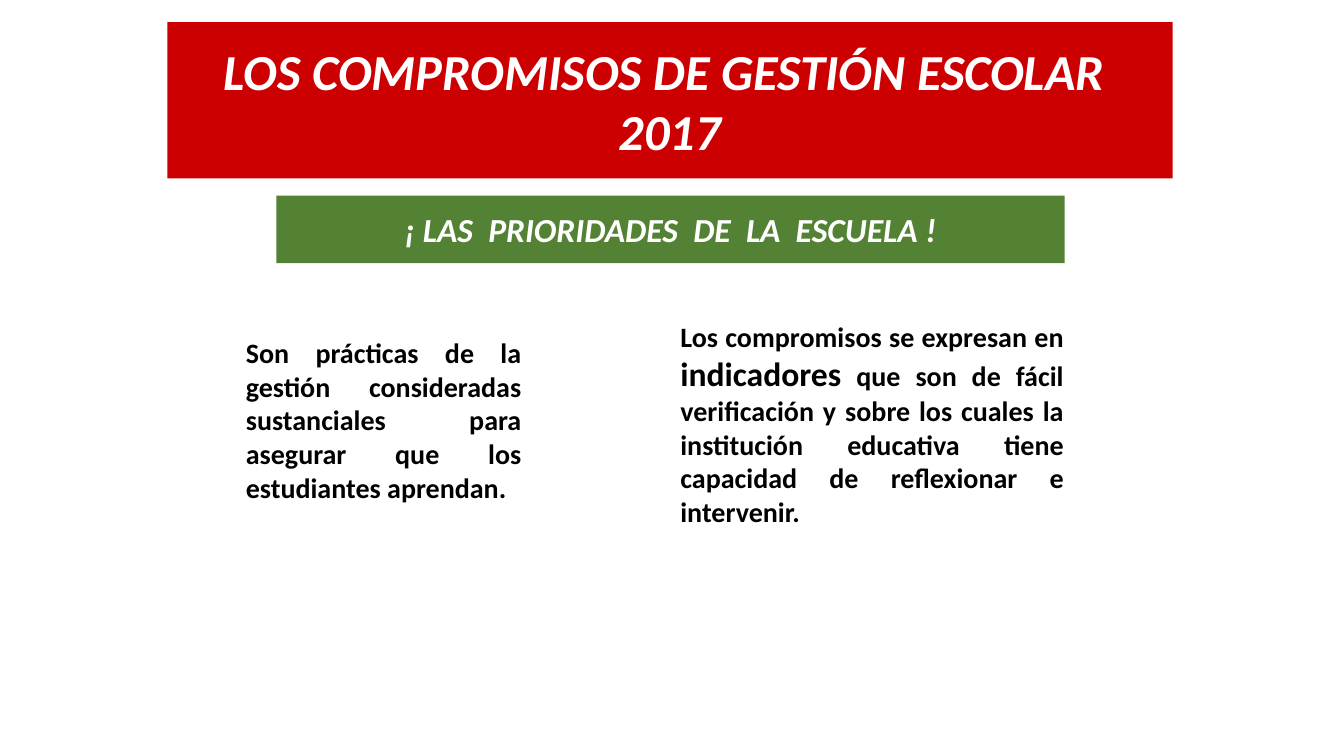
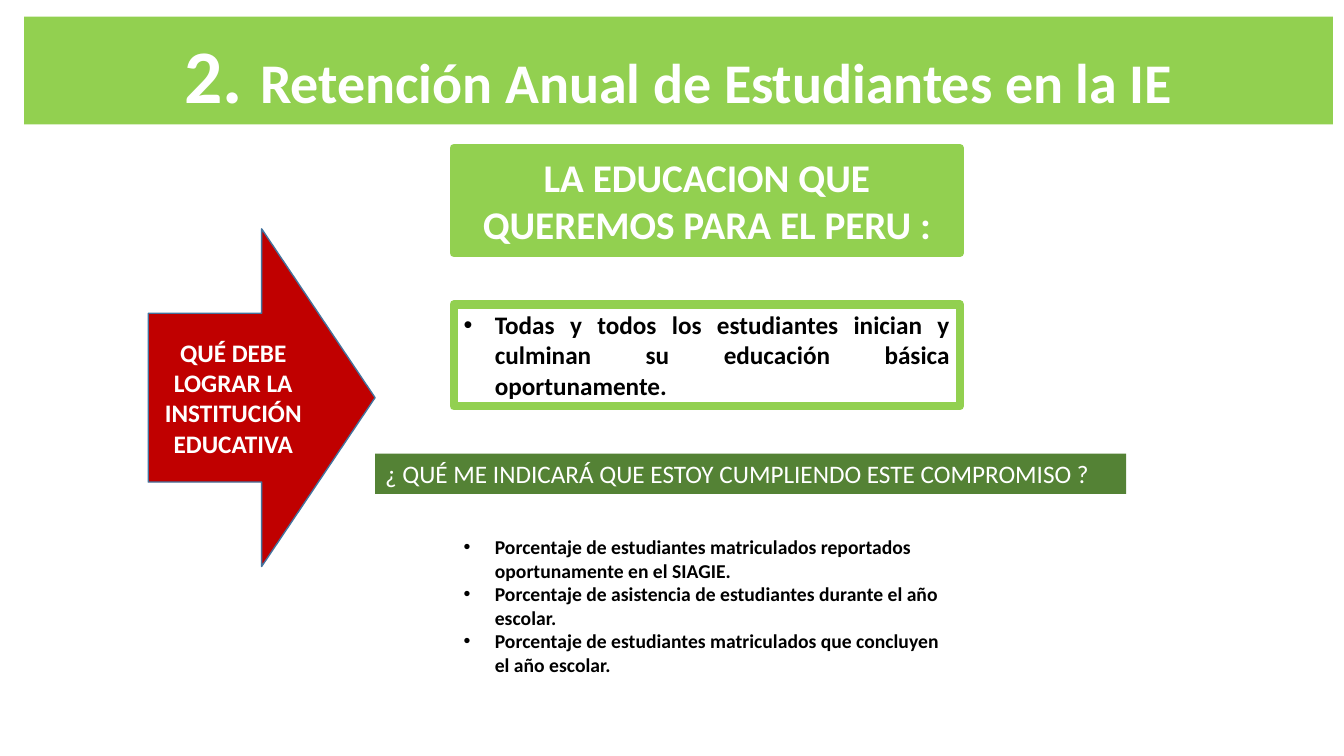
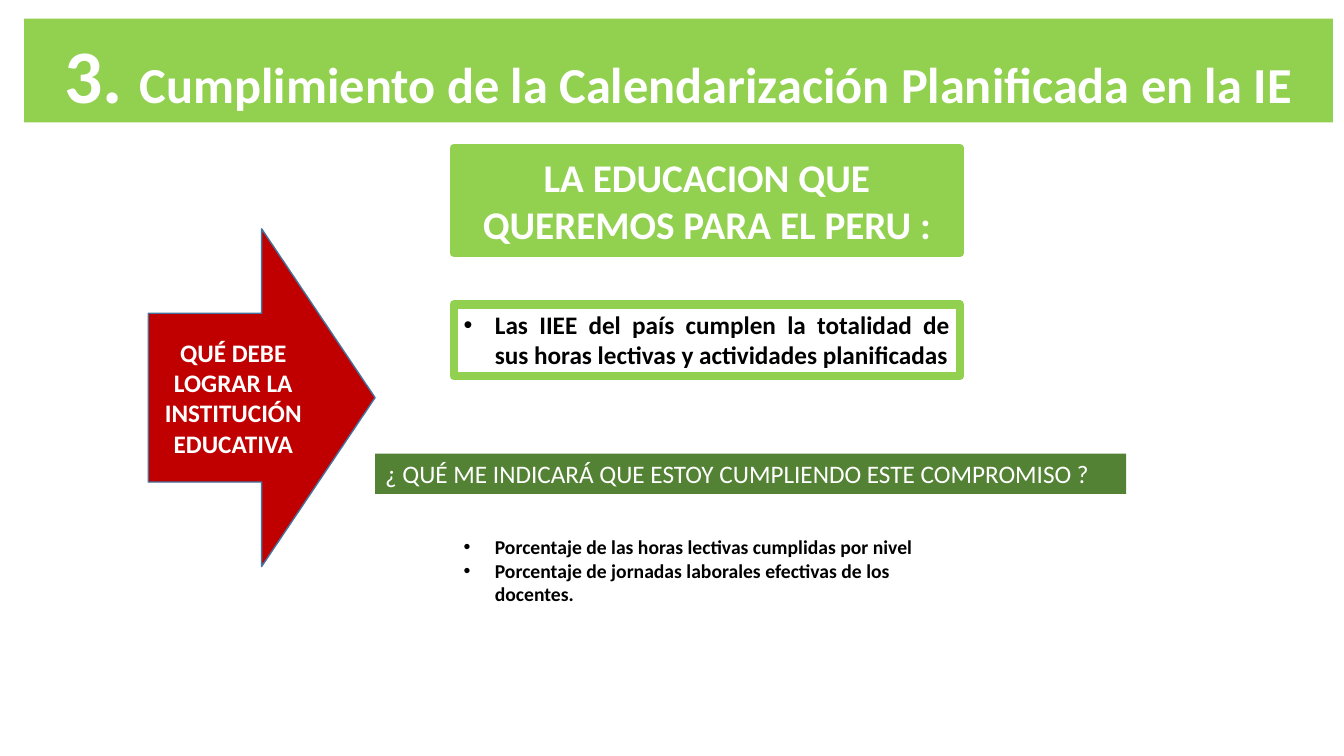
from dataclasses import dataclass

from lxml import etree
from pptx import Presentation
from pptx.dml.color import RGBColor
from pptx.enum.shapes import MSO_SHAPE
from pptx.enum.text import MSO_ANCHOR, MSO_AUTO_SIZE, PP_ALIGN
from pptx.oxml.ns import qn
from pptx.util import Inches, Pt

RECT, ARROW = MSO_SHAPE.RECTANGLE, MSO_SHAPE.RIGHT_ARROW
TOP, MIDDLE = MSO_ANCHOR.TOP, MSO_ANCHOR.MIDDLE
LEFT, CENTER, JUSTIFY = PP_ALIGN.LEFT, PP_ALIGN.CENTER, PP_ALIGN.JUSTIFY
FIXED = MSO_AUTO_SIZE.NONE
TITLE_ONLY = 5


@dataclass(frozen=True)
class Theme:
    font: str = "Calibri"
    white: str = "FFFFFF"
    black: str = "000000"
    red: str = "CC0000"
    wine: str = "C00000"
    lime: str = "92D050"
    green: str = "548235"
    edge: str = "43739E"
    number: int = 54
    cover: int = 36
    head: int = 28
    sub: int = 24
    body: int = 20
    label: int = 18
    small: int = 14
    indent: float = 0.31


T = Theme()


def rgb(code):
    return RGBColor.from_string(code)


def place(shape, box):
    shape.left, shape.top, shape.width, shape.height = map(Inches, box)


def bullet(par):
    props = par._p.get_or_add_pPr()
    props.set("marL", str(Inches(T.indent)))
    props.set("indent", str(-Inches(T.indent)))
    etree.SubElement(props, qn("a:buFont")).set("typeface", "Arial")
    etree.SubElement(props, qn("a:buChar")).set("char", "•")


def write(shape, paras, size, color=T.white, align=CENTER, anchor=TOP,
          bold=True, italic=False, dots=False, spacing=None):
    """Fill a shape with paragraphs; each is a string or a list of (text, size)."""
    frame = shape.text_frame
    frame.word_wrap, frame.auto_size = True, FIXED
    frame.vertical_anchor = anchor
    for i, para in enumerate(paras):
        par = frame.add_paragraph() if i else frame.paragraphs[0]
        par.alignment = align
        if spacing:
            par.line_spacing = spacing
        if dots:
            bullet(par)
        font = par.font
        font.name, font.size = T.font, Pt(size)
        font.bold, font.italic = bold, italic
        font.color.rgb = rgb(color)
        parts = [(para, size)] if isinstance(para, str) else para
        for text, points in parts:
            run = par.add_run()
            run.text = text
            if points != size:
                run.font.size = Pt(points)


def panel(slide, box, fill=None, line=None, width=1, kind=RECT):
    shape = slide.shapes.add_shape(kind, *map(Inches, box))
    shape.shadow.inherit = False
    if fill:
        shape.fill.solid()
        shape.fill.fore_color.rgb = rgb(fill)
    else:
        shape.fill.background()
    if line:
        shape.line.color.rgb = rgb(line)
        shape.line.width = Pt(width)
    else:
        shape.line.fill.background()
    return shape


def banner(deck, box, fill, para, size, **style):
    """Add a slide whose title is a filled band."""
    slide = deck.slides.add_slide(deck.slide_layouts[TITLE_ONLY])
    title = slide.shapes.title
    place(title, box)
    title.fill.solid()
    title.fill.fore_color.rgb = rgb(fill)
    write(title, [para], size, anchor=MIDDLE, **style)
    return slide


def note(slide, box, para):
    shape = slide.shapes.add_textbox(*map(Inches, box))
    write(shape, [para], T.body, T.black, JUSTIFY)


def cover(deck):
    slide = banner(deck, (1.66, 0.22, 9.97, 1.55), T.red,
                   "LOS COMPROMISOS DE GESTIÓN ESCOLAR  2017", T.cover, italic=True)
    write(panel(slide, (2.74, 1.94, 7.82, 0.67), T.green),
          ["¡ LAS  PRIORIDADES  DE  LA  ESCUELA !"], T.sub, anchor=MIDDLE, italic=True)
    note(slide, (2.34, 3.28, 2.93, 2.19),
         "Son prácticas de la gestión consideradas sustanciales para asegurar "
         "que los estudiantes aprendan.")
    note(slide, (6.65, 3.12, 4, 2.19), [
        ("Los compromisos se expresan en ", T.body),
        ("indicadores", T.sub),
        (" que son de fácil verificación y sobre los cuales la institución educativa "
         "tiene capacidad de reflexionar e intervenir.", T.body)])


def goals(slide, box, aim, high, signs):
    """Stack the heading, the aim and its signs in one column."""
    left, top, width = box
    write(panel(slide, (left, top, width, 1.04), T.lime, T.lime, 6),
          ["LA EDUCACION QUE QUEREMOS PARA EL PERU :"], T.head)
    write(panel(slide, (left, top + 1.55, width, high), line=T.lime, width=6),
          [aim], T.label, T.black, JUSTIFY, dots=True)
    write(panel(slide, (left, top + 3.79, width, 1.51), line=T.white, width=0.75),
          signs, T.small, T.black, LEFT, dots=True)


def pledge(deck, number, name, size, tall, aim, high, signs):
    slide = banner(deck, (0.24, 0.7 - tall / 2, 12.98, tall), T.lime,
                   [(f"{number}. ", T.number), (name, size)], size, spacing=1.07)
    write(panel(slide, (3.72, 4.5, 7.45, 0.4), T.green),
          ["¿ QUÉ ME INDICARÁ QUE ESTOY CUMPLIENDO ESTE COMPROMISO ?"],
          T.label, align=LEFT, bold=False)
    write(panel(slide, (1.47, 2.27, 2.25, 3.35), T.wine, T.edge, kind=ARROW),
          ["QUÉ DEBE LOGRAR LA INSTITUCIÓN EDUCATIVA"], T.label, anchor=MIDDLE)
    goals(slide, (4.5, 1.47, 5.02), aim, high, signs)


def main():
    deck = Presentation()
    deck.slide_width, deck.slide_height = Inches(13.33), Inches(7.5)
    cover(deck)
    pledge(deck, 2, "Retención Anual de Estudiantes en la IE", 40, 1.07,
           "Todas y todos los estudiantes inician y culminan su educación básica "
           "oportunamente.", 1.01,
           ["Porcentaje de estudiantes matriculados reportados oportunamente en el SIAGIE.",
            "Porcentaje de asistencia de estudiantes durante el año escolar.",
            "Porcentaje de estudiantes matriculados que concluyen el año escolar."])
    pledge(deck, 3, "Cumplimiento de la Calendarización Planificada en la IE", 36, 1.03,
           "Las IIEE del país cumplen la totalidad de sus horas lectivas y actividades "
           "planificadas", 0.71,
           ["Porcentaje de las horas lectivas cumplidas por nivel",
            "Porcentaje de jornadas laborales efectivas de los docentes."])
    deck.save("out.pptx")


if __name__ == "__main__":
    main()
